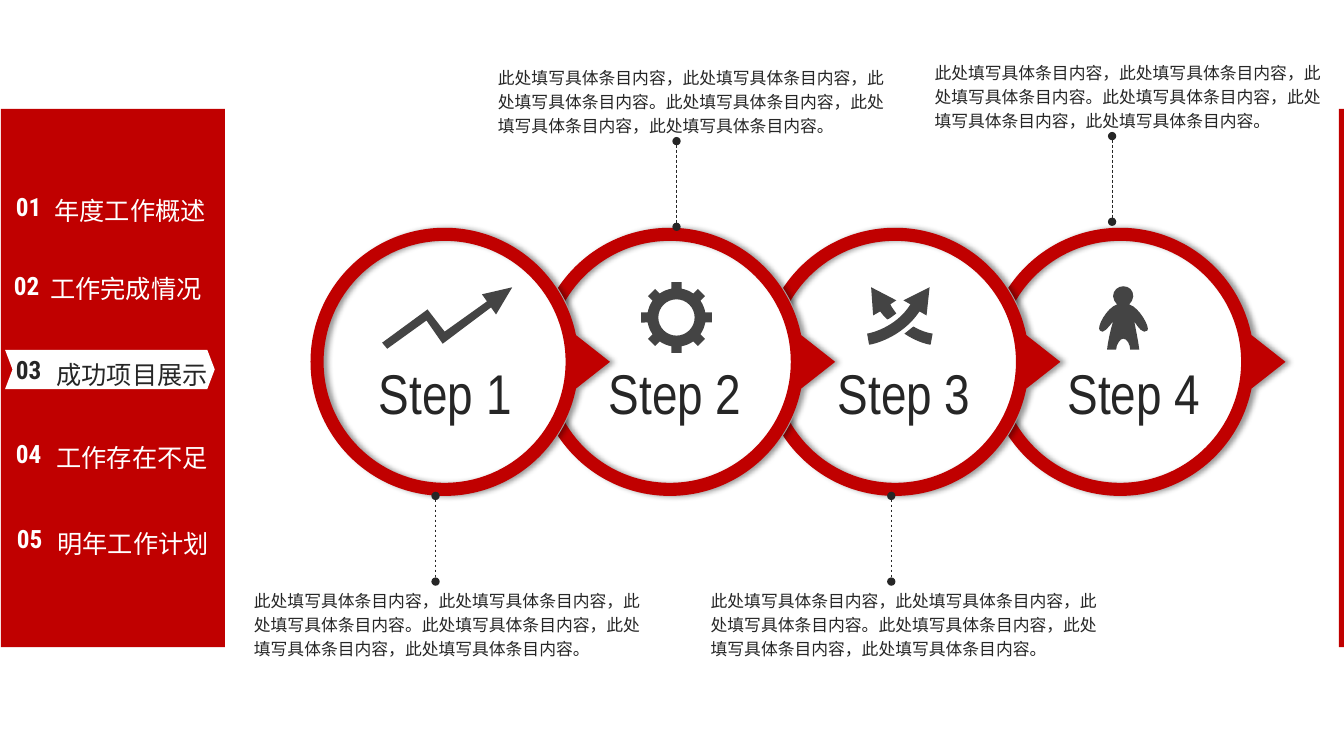
import math
from dataclasses import dataclass

import pptx
import pptx.dml.color
import pptx.enum.dml
import pptx.enum.shapes
import pptx.enum.text
import pptx.oxml
import pptx.oxml.ns
import pptx.util

Inches = pptx.util.Inches
Shapes = pptx.enum.shapes.MSO_SHAPE
Align = pptx.enum.text.PP_ALIGN
qn = pptx.oxml.ns.qn


@dataclass(frozen=True)
class Theme:
    red: str = "C00000"
    white: str = "FFFFFF"
    dark: str = "262626"
    icon: str = "444444"
    menu_size: int = 18
    step_size: int = 40
    body_size: int = 12
    number_font: str = "Roboto Condensed"
    menu_font: str = "Open Sans"
    step_font: str = "Arial Narrow"
    body_font: str = "Calibri"


def color(value):
    return pptx.dml.color.RGBColor.from_string(value)


def apply(target, formats):
    for name, value in formats.items():
        setattr(target, name, value)


def element(tag, **attributes):
    node = pptx.oxml.parse_xml(f"<a:{tag} {pptx.oxml.ns.nsdecls('a')}/>")
    for name, value in attributes.items():
        node.set(name, str(value))
    return node


def polar(cx, cy, radius, degrees):
    angle = math.radians(degrees)
    return cx + radius * math.cos(angle), cy + radius * math.sin(angle)


def arc(cx, cy, radius, start=0, end=360, count=4):
    turn = (end - start) / count
    bend = math.degrees(math.atan(4 / 3 * math.tan(math.radians(turn) / 4)))
    reach = radius / math.cos(math.radians(bend))
    steps = [polar(cx, cy, radius, start)]
    for i in range(count):
        a, b = start + turn * i, start + turn * (i + 1)
        steps.append(polar(cx, cy, reach, a + bend) + polar(cx, cy, reach, b - bend)
                     + polar(cx, cy, radius, b))
    return steps


def gear(cx, cy, outer, body, hole, half_tooth):
    spread = math.degrees(math.asin(half_tooth / body))
    tip = math.hypot(outer, half_tooth)
    tip_spread = math.degrees(math.atan2(half_tooth, outer))
    rim = []
    for middle in range(0, 360, 45):
        rim += [polar(cx, cy, tip, middle - tip_spread), polar(cx, cy, tip, middle + tip_spread)]
        rim += arc(cx, cy, body, middle + spread, middle + 45 - spread, 1)
    return [rim, arc(cx, cy, hole, 360, 0)]


class Page:
    def __init__(self, deck, theme):
        self.theme = theme
        self.slide = deck.slides.add_slide(deck.slide_layouts[6])
        self.shapes = self.slide.shapes

    def paint(self, shape, fill, line=None):
        shape.shadow.inherit = False
        shape.fill.solid()
        shape.fill.fore_color.rgb = color(fill)
        if line:
            shape.line.color.rgb = color(line)
            shape.line.width = pptx.util.Pt(1.5)
        else:
            shape.line.fill.background()
        return shape

    def preset(self, kind, area, fill):
        return self.paint(self.shapes.add_shape(kind, *map(Inches, area)), fill)

    def freeform(self, contours, fill, line=None, shapes=None):
        builder = None
        for contour in contours:
            start, *points = [(Inches(step[i]), Inches(step[i + 1]))
                              for step in contour for i in range(0, len(step), 2)]
            if builder:
                builder.move_to(*start)
            else:
                builder = (shapes or self.shapes).build_freeform(*start, scale=1.0)
            builder.add_line_segments(points, close=True)
        shape = builder.convert_to_shape()
        outline = shape.element.spPr.find(".//" + qn("a:path"))
        nodes = iter([node for node in outline if node.tag != qn("a:close")])
        for step in (step for contour in contours for step in contour):
            first = next(nodes)
            if len(step) == 6:
                curve = element("cubicBezTo")
                first.addprevious(curve)
                for node in (first, next(nodes), next(nodes)):
                    curve.append(node[0])
                    outline.remove(node)
        return self.paint(shape, fill, line)

    def ring(self, cx, cy):
        group = self.shapes.add_group_shape()
        rim = [(cx + 1.64, cy)] + arc(cx, cy, 1.33, 11.5, 348.5)
        self.freeform([rim], self.theme.white, self.theme.white, group.shapes)
        band = self.freeform([rim, arc(cx, cy, 1.2, 360, 0)], self.theme.red, shapes=group.shapes)
        shadow = element("outerShdw", blurRad=pptx.util.Pt(4), dist=pptx.util.Pt(3),
                         dir=0, algn="l", rotWithShape=0)
        tint = element("srgbClr", val="000000")
        tint.append(element("alpha", val=40000))
        shadow.append(tint)
        band.element.spPr.find(qn("a:effectLst")).append(shadow)

    def text(self, words, area, size, font, ink, wrap=True, bold=False, **para_formats):
        box = self.shapes.add_textbox(*map(Inches, area))
        apply(box.text_frame, {"word_wrap": wrap,
                               "auto_size": pptx.enum.text.MSO_AUTO_SIZE.SHAPE_TO_FIT_TEXT})
        para = box.text_frame.paragraphs[0]
        apply(para, para_formats)
        span = para.add_run()
        span.text = words
        apply(span.font, {"size": pptx.util.Pt(size), "name": font, "bold": bold})
        span.font.color.rgb = color(ink)

    def leader(self, x, top):
        line = self.shapes.add_connector(pptx.enum.shapes.MSO_CONNECTOR.STRAIGHT,
                                         *map(Inches, (x, top, x, top + 0.85)))
        line.line.color.rgb = color(self.theme.dark)
        apply(line.line, {"width": pptx.util.Pt(0.5),
                          "dash_style": pptx.enum.dml.MSO_LINE.DASH})
        properties = line.element.spPr
        stroke = properties.find(qn("a:ln"))
        for end in ("headEnd", "tailEnd"):
            stroke.append(element(end, type="oval"))
        properties.append(element("effectLst"))


MENU = [
    ("年度工作概述", 0.06, 1.85, 0.27, 1.74),
    ("工作完成情况", 0.04, 2.63, 0.23, 2.51),
    ("成功项目展示", 0.06, 3.47, 0.29, 3.37),
    ("工作存在不足", 0.06, 4.3, 0.29, 4.19),
    ("明年工作计划", 0.07, 5.14, 0.3, 5.04),
]
CURRENT = 3
STEPS = [(3.66, 1.55), (5.94, 1.62), (8.21, 1.64), (10.49, 1.62)]
NOTES = [(4.32, 4.92, 2.42, 5.77), (6.71, 1.4, 4.84, 0.58),
         (8.84, 4.92, 6.95, 5.77), (11.03, 1.35, 9.17, 0.53)]
CLAUSE = "此处填写具体条目内容"
NOTE = ("，".join([CLAUSE] * 3) + "。") * 2

CROSSING_ARROWS = [
    [(8.73, 3.09), (8.75, 3.12, 8.78, 3.15, 8.8, 3.17), (8.83, 3.16, 8.86, 3.13, 8.89, 3.11),
     (8.87, 3.08, 8.85, 3.06, 8.83, 3.02), (8.89, 2.98), (8.64, 2.85), (8.66, 3.13)],
    [(9.12, 3.09), (9.19, 3.13), (9.22, 2.85), (8.96, 2.98), (9.03, 3.02),
     (8.88, 3.26, 8.61, 3.31, 8.6, 3.31), (8.62, 3.42), (8.64, 3.42, 8.94, 3.36, 9.12, 3.09)],
    [(9.06, 3.24), (9.03, 3.26, 9, 3.29, 8.97, 3.31), (9.1, 3.4, 9.22, 3.42, 9.23, 3.42),
     (9.25, 3.31), (9.25, 3.31, 9.16, 3.3, 9.06, 3.24)],
]
PERSON = [[
    (11.2, 3.02), (11.22, 3, 11.24, 2.97, 11.24, 2.94), (11.24, 2.88, 11.2, 2.84, 11.14, 2.84),
    (11.09, 2.84, 11.04, 2.88, 11.04, 2.94), (11.04, 2.97, 11.06, 3, 11.08, 3.02),
    (10.98, 3.05, 10.87, 3.25, 10.91, 3.28), (10.94, 3.32, 10.99, 3.25, 11.04, 3.19),
    (11.01, 3.29, 10.99, 3.39, 10.98, 3.47), (11.07, 3.47), (11.07, 3.42, 11.11, 3.36, 11.14, 3.36),
    (11.18, 3.36, 11.21, 3.42, 11.21, 3.47), (11.3, 3.47), (11.29, 3.39, 11.27, 3.29, 11.25, 3.19),
    (11.29, 3.25, 11.34, 3.32, 11.38, 3.28), (11.41, 3.25, 11.3, 3.05, 11.2, 3.02)]]
TREND = [[(5.08, 2.85), (4.78, 2.92), (4.83, 2.99), (4.41, 3.29), (4.24, 3.07), (3.79, 3.4),
          (3.84, 3.46), (4.23, 3.18), (4.39, 3.41), (4.87, 3.05), (4.92, 3.12)]]


def main():
    deck = pptx.Presentation()
    apply(deck, {"slide_width": Inches(13.33), "slide_height": Inches(7.5)})
    theme = Theme()
    page = Page(deck, theme)

    page.preset(Shapes.RECTANGLE, (0.01, 1.08, 2.22, 5.34), theme.red)
    marker = page.preset(Shapes.CHEVRON, (0.05, 3.47, 2.08, 0.39), theme.white)
    marker.adjustments[0] = 0.19
    for number, (title, number_x, number_y, title_x, title_y) in enumerate(MENU, 1):
        ink = theme.dark if number == CURRENT else theme.white
        page.text(f"{number:02}", (number_x, number_y, 0.56, 0.4), theme.menu_size,
                  theme.number_font, ink, bold=True)
        page.text(title, (title_x, title_y, 2.04, 0.5), theme.menu_size, theme.menu_font, ink,
                  alignment=Align.CENTER, line_spacing=1.5)

    for i in reversed(range(len(STEPS))):
        page.ring(4.41 + 6.7 * i / 3, 3.59)
    for icon in (gear(6.71, 3.15, 0.35, 0.29, 0.18, 0.05), CROSSING_ARROWS, PERSON, TREND):
        page.freeform(icon, theme.icon)
    for number, (left, width) in enumerate(STEPS, 1):
        page.text(f"Step {number}", (left, 3.51, width, 0.77), theme.step_size,
                  theme.step_font, theme.dark, wrap=False)
    for line_x, line_y, left, top in NOTES:
        page.leader(line_x, line_y)
        page.text(NOTE, (left, top, 4.08, 0.83), theme.body_size, theme.body_font, theme.dark,
                  line_spacing=1.2)
    page.preset(Shapes.RECTANGLE, (13.28, 1.08, 0.05, 5.34), theme.red)
    deck.save("out.pptx")


if __name__ == "__main__":
    main()
